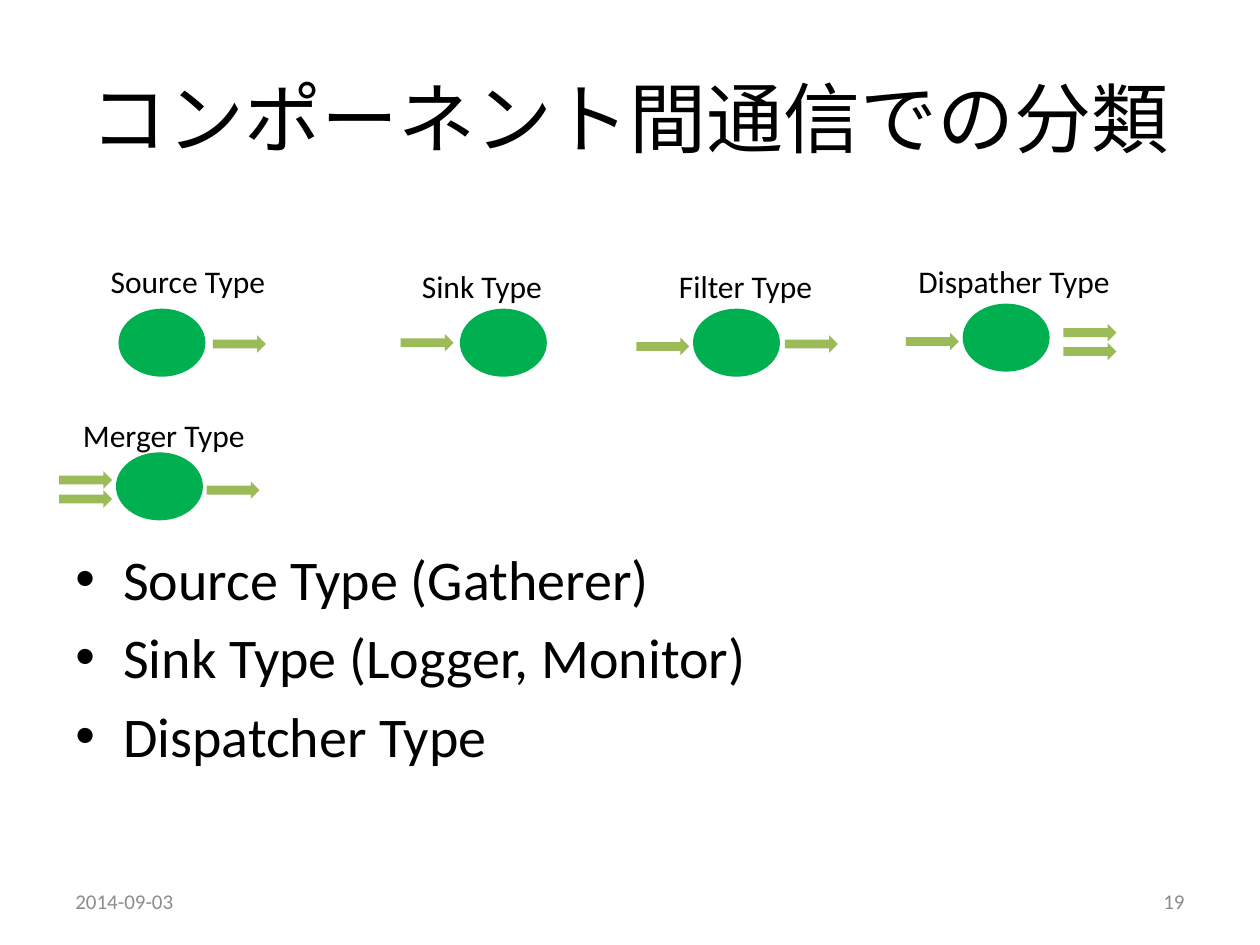
from dataclasses import dataclass

import pptx
import pptx.dml.color
import pptx.enum.shapes
import pptx.enum.text
import pptx.oxml
import pptx.oxml.ns
import pptx.util
from pptx.util import Inches

FONT = "Calibri"
BLACK, GRAY = "000000", "8C8C8C"
GREEN, OLIVE = "00B050", "9BBB59"
ALIGN = pptx.enum.text.PP_ALIGN
ANCHOR = pptx.enum.text.MSO_ANCHOR
SHAPE = pptx.enum.shapes.MSO_SHAPE
NODE_SIZE = (0.69, 0.54)
ARROW_SIZE = (0.42, 0.14)


@dataclass(frozen=True)
class ComponentType:
    label: str
    label_at: tuple[float, float]
    label_width: float
    node_at: tuple[float, float]
    arrows_at: tuple[tuple[float, float], ...]


COMPONENT_TYPES = (
    ComponentType("Source Type", (0.78, 2.03), 1.44, (0.94, 2.45), ((1.69, 2.66),)),
    ComponentType("Sink Type", (3.25, 2.07), 1.17, (3.65, 2.45), ((3.18, 2.65),)),
    ComponentType("Filter Type", (5.29, 2.07), 1.27, (5.5, 2.45),
                  ((5.05, 2.68), (6.23, 2.66))),
    ComponentType("Dispather Type", (7.19, 2.03), 1.74, (7.64, 2.41),
                  ((7.19, 2.64), (8.44, 2.57), (8.44, 2.72))),
    ComponentType("Merger Type", (0.56, 3.25), 1.5, (0.92, 3.59),
                  ((0.47, 3.74), (0.47, 3.89), (1.64, 3.82))),
)


def rgb(value: str) -> pptx.dml.color.RGBColor:
    return pptx.dml.color.RGBColor.from_string(value)


def add_bullet(paragraph, indent: float) -> None:
    properties = paragraph._p.get_or_add_pPr()
    properties.set("marL", str(Inches(indent)))
    properties.set("indent", str(-Inches(indent)))
    namespace = pptx.oxml.ns.nsdecls("a")
    properties.append(pptx.oxml.parse_xml(f'<a:buFont {namespace} typeface="Arial"/>'))
    properties.append(pptx.oxml.parse_xml(f'<a:buChar {namespace} char="•"/>'))


def add_text(slide, text: str, at: tuple[float, float], size: tuple[float, float], *,
             points: float = 18, color: str = BLACK, align=ALIGN.LEFT,
             anchor=ANCHOR.TOP, wrap: bool = True, bullets: bool = False) -> None:
    frame = slide.shapes.add_textbox(*map(Inches, at + size)).text_frame
    frame.word_wrap = wrap
    frame.vertical_anchor = anchor
    frame.text = text
    for paragraph in frame.paragraphs:
        paragraph.alignment = align
        paragraph.font.name = FONT
        paragraph.font.size = pptx.util.Pt(points)
        paragraph.font.color.rgb = rgb(color)
        if bullets:
            paragraph.space_before = pptx.util.Pt(points * 0.2)
            add_bullet(paragraph, 0.38)


def add_solid(slide, kind, at: tuple[float, float], size: tuple[float, float],
              color: str) -> None:
    solid = slide.shapes.add_shape(kind, *map(Inches, at + size))
    solid.shadow.inherit = False
    solid.fill.solid()
    solid.fill.fore_color.rgb = rgb(color)
    solid.line.fill.background()


def draw_component(slide, component: ComponentType) -> None:
    add_solid(slide, SHAPE.OVAL, component.node_at, NODE_SIZE, GREEN)
    for arrow_at in component.arrows_at:
        add_solid(slide, SHAPE.RIGHT_ARROW, arrow_at, ARROW_SIZE, OLIVE)
    add_text(slide, component.label, component.label_at,
             (component.label_width, 0.4), wrap=False)


def main() -> None:
    deck = pptx.Presentation()
    deck.slide_width, deck.slide_height = Inches(10), Inches(7.5)
    slide = deck.slides.add_slide(deck.slide_layouts[6])

    add_text(slide, "コンポーネント間通信での分類", (0.5, 0.3), (9, 1.25),
             points=44, align=ALIGN.CENTER, anchor=ANCHOR.MIDDLE)
    examples = ("Source Type (Gatherer)", "Sink Type (Logger, Monitor)", "Dispatcher Type")
    add_text(slide, "\n".join(examples), (0.5, 4.27), (9, 2.43), points=32, bullets=True)
    for text, left, align in (("2014-09-03", 0.5, ALIGN.LEFT), ("19", 7.17, ALIGN.RIGHT)):
        add_text(slide, text, (left, 6.95), (2.33, 0.4), points=12, color=GRAY,
                 align=align, anchor=ANCHOR.MIDDLE)
    for component in COMPONENT_TYPES:
        draw_component(slide, component)

    deck.save("out.pptx")


if __name__ == "__main__":
    main()
